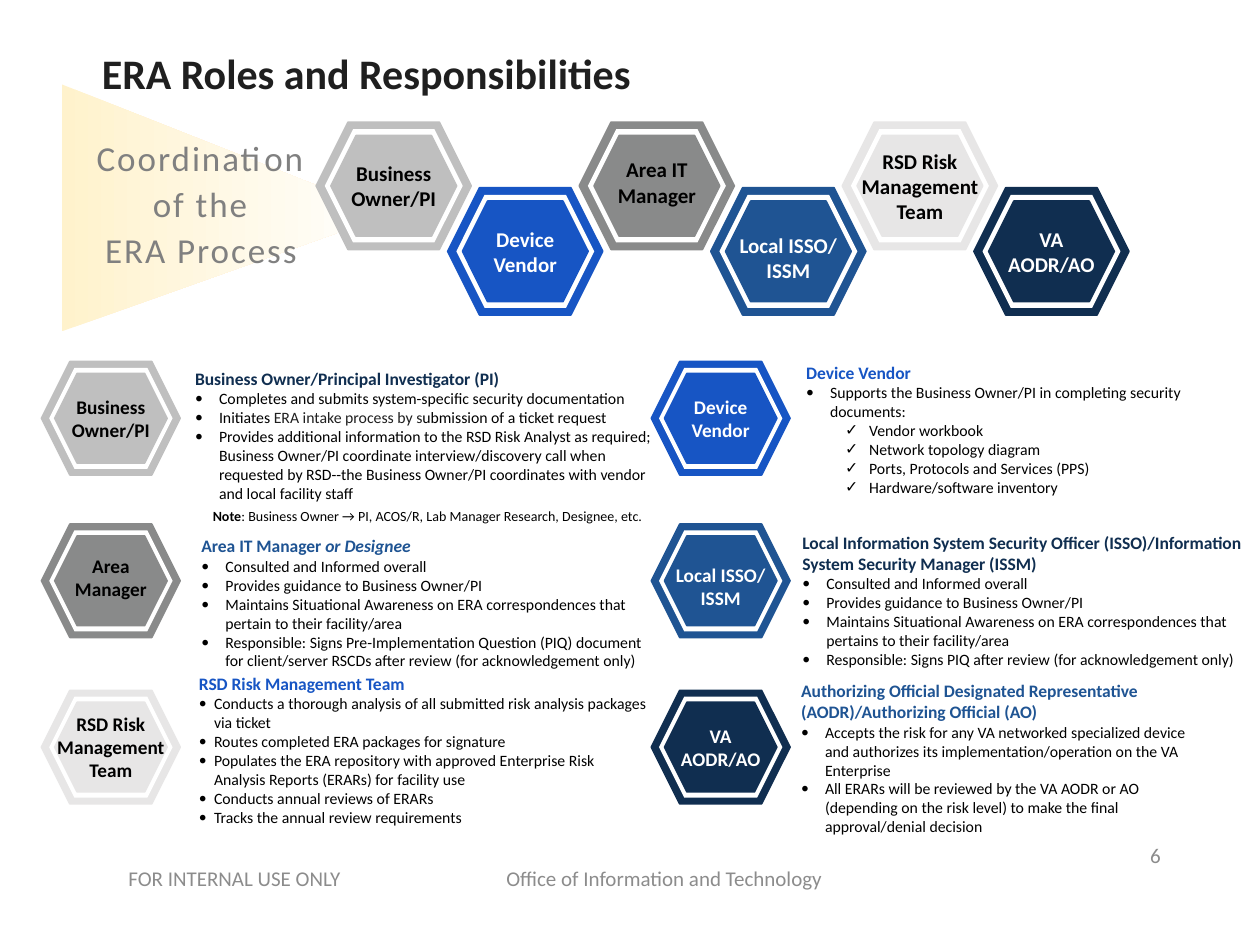
from collections import namedtuple
from dataclasses import dataclass

from lxml.etree import SubElement
from pptx import Presentation
from pptx.dml.color import RGBColor as RGB
from pptx.enum.shapes import MSO_SHAPE as Geo
from pptx.enum.text import MSO_ANCHOR as Anchor, PP_ALIGN as Align
from pptx.oxml.ns import qn
from pptx.util import Inches, Pt

COLS, ROWS = 100, 75
CELL = Inches(0.1)


@dataclass(frozen=True)
class Theme:
    font: str = "Calibri"
    white: str = "FFFFFF"
    black: str = "000000"
    ink: str = "1F1F1F"
    caption: str = "808080"
    muted: str = "8C8C8C"
    cream: str = "FFF2CC"
    silver: str = "BFBFBF"
    gray: str = "898A8A"
    pale: str = "E7E6E6"
    blue: str = "1755C4"
    steel: str = "1F5493"
    navy: str = "102E50"
    title_size: int = 24
    caption_size: int = 20
    chain_size: int = 12
    footer_size: int = 12
    badge_size: int = 11
    heading_size: int = 10
    body_size: int = 9
    note_size: int = 8


T = Theme()
Box = namedtuple("Box", "x y w h")
Para = namedtuple("Para", "runs bullet left hang", defaults=(None, 0, 0))
# label_w is a share of the badge width, nudge a share of its height
Role = namedtuple("Role", "label lines fill ink label_w nudge", defaults=(0.86, 0))
Duty = namedtuple("Duty", "role badge_at text_box heading heading_ink items hang",
                  defaults=(1.9,))

BUSINESS = Role(["Business Owner/PI"], 2, T.silver, T.black)
VENDOR = Role(["Device Vendor"], 2, T.blue, T.white, 0.68)
AREA = Role(["Area IT Manager"], 2, T.gray, T.black, 0.86, -0.03)
ISSO = Role(["Local ISSO/", "ISSM"], 2, T.steel, T.white, 0.86, 0.05)
RSD = Role(["RSD Risk Management Team"], 3, T.pale, T.black, 1.2)
AODR = Role(["VA", "AODR/AO"], 2, T.navy, T.white, 1)
CHAIN = [BUSINESS, VENDOR, AREA, ISSO, RSD, AODR]

LEFT, RIGHT = 3.3, 51.7
TOP, MIDDLE, BOTTOM = 28.7, 41.6, 54.8
BADGE_W, BADGE_H = 11, 9
CHAIN_BADGE_W, CHAIN_BADGE_H = 12.3, 10.1

DUTIES = [
    Duty(BUSINESS, (LEFT, TOP), Box(14.5, 28.7, 38.2, 11.8),
         [("Business Owner/Principal Investigator (PI)", {})], T.navy,
         ["Completes and submits system-specific security documentation",
          [("Initiates ", {}), ("ERA intake process by s", {"color": T.ink}),
           ("ubmission of a ticket request", {})],
          "Provides additional information to the RSD Risk Analyst as required; "
          "Business Owner/PI coordinate interview/discovery call when requested by "
          "RSD--the Business Owner/PI coordinates with vendor and local facility staff"]),
    Duty(VENDOR, (RIGHT, TOP), Box(63, 28.2, 36.6, 11.8),
         [("Device Vendor", {})], T.blue,
         ["Supports the Business Owner/PI in completing security documents:",
          *[Para([(item, {})], "✓", 5, 1.9) for item in (
              "Vendor workbook", "Network topology diagram",
              "Ports, Protocols and Services (PPS)", "Hardware/software inventory")]]),
    Duty(AREA._replace(label=["Area Manager"]), (LEFT, MIDDLE), Box(15, 42, 37.5, 11.8),
         [("Area IT Manager ", {}), ("or Designee", {"italic": True})], T.steel,
         ["Consulted and Informed overall",
          "Provides guidance to Business Owner/PI",
          "Maintains Situational Awareness on ERA correspondences that pertain to "
          "their facility/area",
          "Responsible: Signs Pre-Implementation Question (PIQ) document for "
          "client/server RSCDs after review (for acknowledgement only)"]),
    Duty(ISSO, (RIGHT, MIDDLE), Box(62.7, 41.7, 37, 11.9),
         [("Local Information System Security Officer (ISSO)/Information System "
           "Security Manager (ISSM)", {})], T.navy,
         ["Consulted and Informed overall",
          "Provides guidance to Business Owner/PI",
          "Maintains Situational Awareness on ERA correspondences that pertains to "
          "their facility/area",
          "Responsible: Signs PIQ after review (for acknowledgement only)"]),
    Duty(RSD, (LEFT, BOTTOM), Box(14.8, 52.9, 38.2, 13.3),
         [("RSD Risk Management Team", {})], T.blue,
         ["Conducts a thorough analysis of all submitted risk analysis packages via ticket",
          "Routes completed ERA packages for signature",
          "Populates the ERA repository with approved Enterprise Risk\n"
          "Analysis Reports (ERARs) for facility use",
          "Conducts annual reviews of ERARs",
          "Tracks the annual review requirements"], 1.2),
    Duty(AODR, (RIGHT, BOTTOM), Box(62.6, 53.5, 34, 13.5),
         [("Authorizing Official Designated Representative (AODR)/Authorizing "
           "Official (AO)", {})], T.steel,
         ["Accepts the risk for any VA networked specialized device and authorizes its "
          "implementation/operation on the VA Enterprise",
          "All ERARs will be reviewed by the VA AODR or AO (depending on the risk "
          "level) to make the final approval/denial decision"]),
]


def cells(box):
    return [round(length * CELL) for length in box]


def centred(box, w_share, h_share):
    w, h = box.w * w_share, box.h * h_share
    return Box(box.x + (box.w - w) / 2, box.y + (box.h - h) / 2, w, h)


def add_run(paragraph, text, size, color, bold=False, italic=False, tracking=0):
    run = paragraph.add_run()
    run.text = text
    font = run.font
    font.name, font.size, font.bold, font.italic = T.font, Pt(size), bold, italic
    font.color.rgb = RGB.from_string(color)
    if tracking:
        run._r.get_or_add_rPr().set("spc", str(round(tracking * 100)))


def write(shapes, box, paras, align=Align.LEFT, anchor=Anchor.TOP, wrap=True,
          spacing=None, tabs=(), **style):
    """Each paragraph is a string or a Para whose runs override the style."""
    frame = shapes.add_textbox(*cells(box)).text_frame
    frame.word_wrap, frame.vertical_anchor = wrap, anchor
    for index, para in enumerate(paras):
        para = Para([(para, {})]) if isinstance(para, str) else para
        paragraph = frame.add_paragraph() if index else frame.paragraphs[0]
        paragraph.alignment = align
        if spacing:
            paragraph.line_spacing = spacing
        props = paragraph._p.get_or_add_pPr()
        if para.bullet:
            props.set("marL", str(round(para.left * CELL)))
            props.set("indent", str(round(-para.hang * CELL)))
            SubElement(props, qn("a:buFont")).set("typeface", T.font)
            SubElement(props, qn("a:buChar")).set("char", para.bullet)
        if tabs:
            stops = SubElement(props, qn("a:tabLst"))
            for tab in tabs:
                SubElement(stops, qn("a:tab"), pos=str(round(tab * CELL)), algn="l")
        for text, override in para.runs:
            for line_no, line in enumerate(text.split("\n")):
                if line_no:
                    paragraph.add_line_break()
                add_run(paragraph, line, **{**style, **override})


def add_hexagon(shapes, box, color, outlined):
    hexagon = shapes.add_shape(Geo.HEXAGON, *cells(box))
    hexagon.shadow.inherit = False
    hexagon.fill.solid()
    hexagon.fill.fore_color.rgb = RGB.from_string(color)
    if outlined:
        hexagon.line.color.rgb = RGB.from_string(color)
        hexagon.line.width = Pt(1)
    else:
        hexagon.line.fill.background()


def role_badge(shapes, box, role, size):
    add_hexagon(shapes, box, role.fill, True)
    add_hexagon(shapes, centred(box, 0.89, 0.89), T.white, False)
    add_hexagon(shapes, centred(box, 0.81, 0.79), role.fill, True)
    label_h = role.lines * size * 1.22 / 7.2 + 1
    label = centred(box, role.label_w, label_h / box.h)
    write(shapes, label._replace(y=label.y + role.nudge * box.h), role.label,
          align=Align.CENTER, anchor=Anchor.MIDDLE, size=size, color=role.ink, bold=True)


def coordination_banner(slide, box):
    beam_box = Box(box.x + (box.w - box.h) / 2, box.y + (box.h - box.w) / 2, box.h, box.w)
    beam = slide.shapes.add_shape(Geo.ISOSCELES_TRIANGLE, *cells(beam_box))
    beam.rotation = 90
    beam.adjustments[0] = 0.526
    beam.shadow.inherit = False
    beam.line.fill.background()
    beam.fill.gradient()
    beam.fill.gradient_angle = 90
    for stop, color, position in zip(beam.fill.gradient_stops, (T.cream, T.white), (0, 1)):
        stop.color.rgb = RGB.from_string(color)
        stop.position = position
    write(slide.shapes, Box(box.x - 1.5, box.y + 3.3, 25.1, 11.9),
          ["Coordination\nof the\nERA Process"], align=Align.CENTER, spacing=1.1,
          size=T.caption_size, color=T.caption, tracking=1.1)


def role_chain(slide, box):
    """Six badges at equal steps, every second one lowered."""
    shapes = slide.shapes.add_group_shape().shapes
    step = (box.w - CHAIN_BADGE_W) / (len(CHAIN) - 1)
    drop = box.h - CHAIN_BADGE_H
    for index, role in enumerate(CHAIN):
        place = Box(box.x + index * step, box.y + index % 2 * drop,
                    CHAIN_BADGE_W, CHAIN_BADGE_H)
        role_badge(shapes, place, role, T.chain_size)


def duty_panel(slide, duty):
    badge = slide.shapes.add_group_shape().shapes
    role_badge(badge, Box(*duty.badge_at, BADGE_W, BADGE_H), duty.role, T.badge_size)
    heading = [(text, {"size": T.heading_size, "color": duty.heading_ink, "bold": True, **extra})
               for text, extra in duty.heading]
    items = [item if isinstance(item, Para) else
             Para([(item, {})] if isinstance(item, str) else item, "•", duty.hang, duty.hang)
             for item in duty.items]
    write(slide.shapes, duty.text_box, [Para(heading), *items],
          size=T.body_size, color=T.black)


def footer(slide, box):
    style = dict(anchor=Anchor.MIDDLE, size=T.footer_size, color=T.muted)
    write(slide.shapes, Box(box.x, box.y + 1.8, 61.8, 4),
          ["FOR INTERNAL USE ONLY\t\tOffice of Information and Technology"],
          tabs=(20, 30), **style)
    write(slide.shapes, Box(box.x + box.w - 22.5, box.y, 22.5, 4), ["6"],
          align=Align.RIGHT, **style)


def main():
    deck = Presentation()
    deck.slide_width, deck.slide_height = COLS * CELL, ROWS * CELL
    slide = deck.slides.add_slide(deck.slide_layouts[6])
    coordination_banner(slide, Box(4.9, 6.7, 26, 19.6))
    write(slide.shapes, Box(7.1, 2.3, 86.2, 7.5), ["ERA Roles and Responsibilities"],
          anchor=Anchor.MIDDLE, spacing=0.9, size=T.title_size, color=T.ink, bold=True)
    role_chain(slide, Box(25.1, 9.7, 64.5, 15.3))
    for duty in DUTIES:
        duty_panel(slide, duty)
    note = Para([("Note", {"bold": True}),
                 (": Business Owner → PI, ACOS/R, Lab Manager Research, Designee, etc.", {})])
    write(slide.shapes, Box(15.9, 39.8, 36.5, 2.4), [note], wrap=False,
          size=T.note_size, color=T.black)
    footer(slide, Box(9.2, 65.9, 83.9, 5.8))
    deck.save("out.pptx")


if __name__ == "__main__":
    main()
